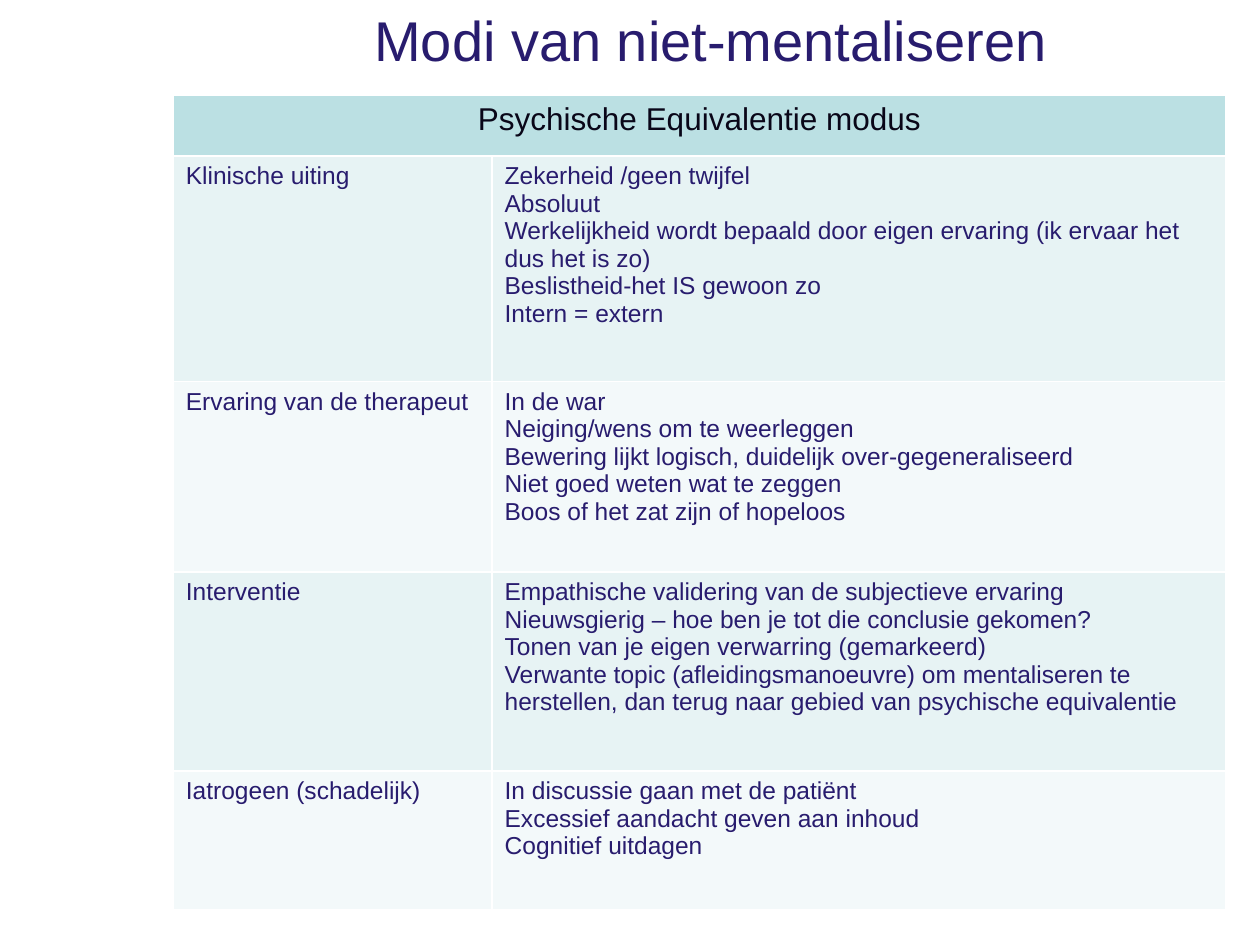
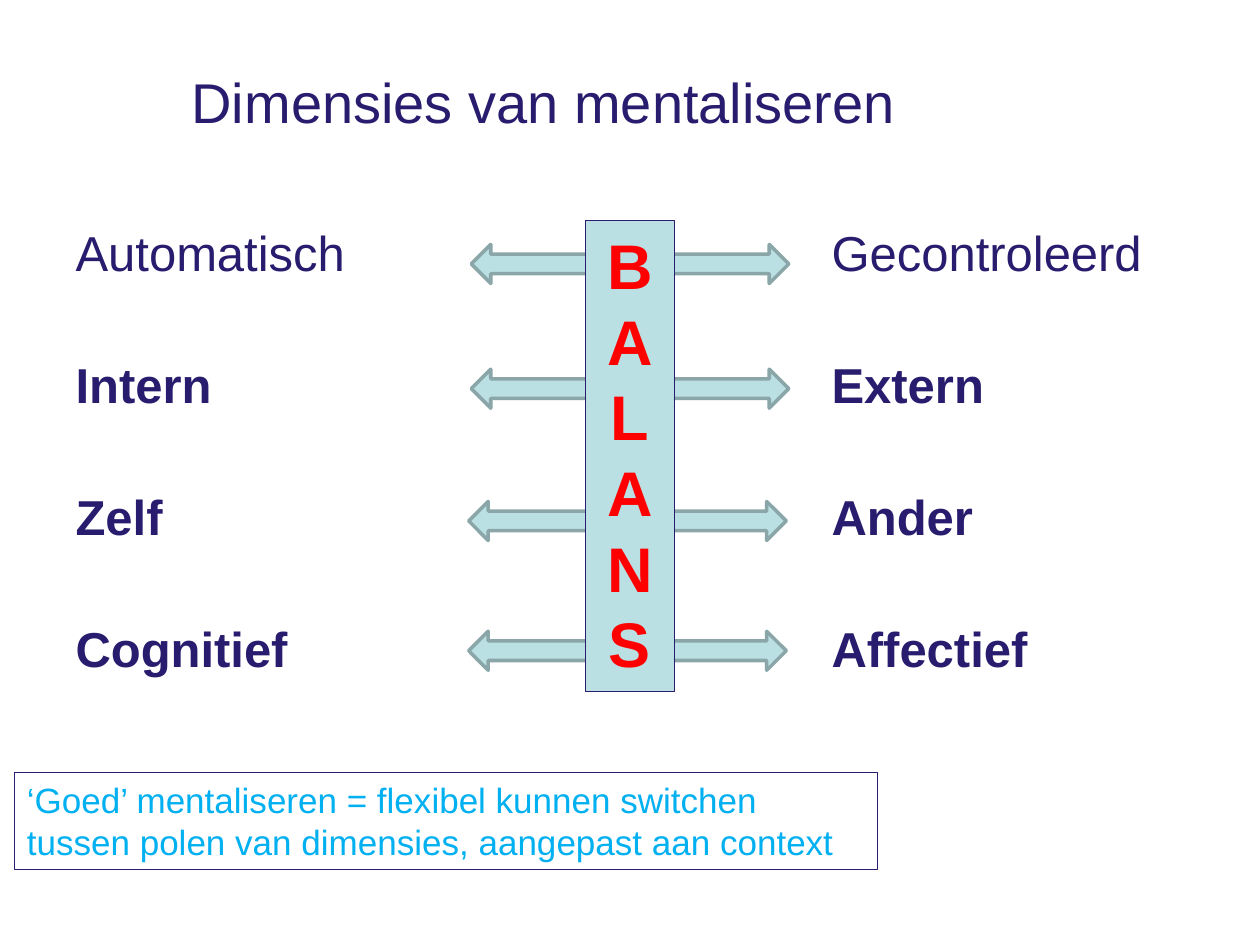
from typing import NamedTuple

from lxml import etree
from pptx import Presentation
from pptx import util as u
from pptx.dml.color import RGBColor
from pptx.enum import shapes, text
from pptx.oxml.ns import qn

# Shared look
FONT = "Arial"
INDIGO, TEAL, WHITE = "281C6E", "BBE0E3", "FFFFFF"
BANDS = ("E7F3F4", "F3F9FA")
LEFT, CENTER = text.PP_ALIGN.LEFT, text.PP_ALIGN.CENTER

# The slide is a grid of 100 columns by 75 rows of square units
COLUMNS = 100
SLIDE_WIDTH, SLIDE_HEIGHT = u.Inches(10), u.Inches(7.5)
UNIT = SLIDE_WIDTH / COLUMNS


class Area(NamedTuple):
    """Place on the grid, in columns and rows."""
    left: float
    top: float
    width: float
    height: float

    def lengths(self) -> list:
        return [grid(value) for value in self]


class Topic(NamedTuple):
    """One row of the mode table."""
    name: str
    points: list
    height: float


class Pole(NamedTuple):
    """A pair of opposites, with the place of its arrow."""
    left: str
    right: str
    arrow_left: float
    arrow_top: float
    bold: bool = True


TOPICS = [
    Topic("Klinische uiting", [
        "Zekerheid /geen twijfel",
        "Absoluut",
        "Werkelijkheid wordt bepaald door eigen ervaring (ik ervaar het dus het is zo)",
        "Beslistheid-het IS gewoon zo",
        "Intern = extern"], 17.9),
    Topic("Ervaring van de therapeut", [
        "In de war",
        "Neiging/wens om te weerleggen",
        "Bewering lijkt logisch, duidelijk over-gegeneraliseerd",
        "Niet goed weten wat te zeggen",
        "Boos of het zat zijn of hopeloos"], 15.1),
    Topic("Interventie", [
        "Empathische validering van de subjectieve ervaring",
        "Nieuwsgierig – hoe ben je tot die conclusie gekomen?",
        "Tonen van je eigen verwarring (gemarkeerd)",
        "Verwante topic (afleidingsmanoeuvre) om mentaliseren te herstellen, "
        "dan terug naar gebied van psychische equivalentie"], 15.8),
    Topic("Iatrogeen (schadelijk)", [
        "In discussie gaan met de patiënt",
        "Excessief aandacht geven aan inhoud",
        "Cognitief uitdagen"], 11),
]

POLES = [
    Pole("Automatisch", "Gecontroleerd", 37.4, 19.4, bold=False),
    Pole("Intern", "Extern", 37.4, 29.3),
    Pole("Zelf", "Ander", 37.2, 39.8),
    Pole("Cognitief", "Affectief", 37.2, 50.1),
]


def grid(units: float) -> int:
    return u.Emu(round(units * UNIT))


def color(value: str) -> RGBColor:
    return RGBColor.from_string(value)


def write(frame, lines, size: float, ink: str = INDIGO, bold: bool = False,
          align=LEFT) -> None:
    """Fill a text frame with one paragraph for each line."""
    for index, line in enumerate(lines):
        paragraph = frame.add_paragraph() if index else frame.paragraphs[0]
        paragraph.alignment = align
        run = paragraph.add_run()
        run.text = line
        run.font.name = FONT
        run.font.size = u.Pt(size)
        run.font.bold = bold
        run.font.color.rgb = color(ink)


def add_titled_slide(presentation, title: str, area: Area):
    slide = presentation.slides.add_slide(presentation.slide_layouts[5])
    shape = slide.shapes.title
    shape.left, shape.top, shape.width, shape.height = area.lengths()
    frame = shape.text_frame
    frame.auto_size = text.MSO_AUTO_SIZE.NONE
    frame.vertical_anchor = text.MSO_ANCHOR.BOTTOM
    write(frame, [title], 32)
    return slide


def style_cell(cell, fill: str | None = None) -> None:
    """Give a cell thin white borders and its fill."""
    properties = cell._tc.get_or_add_tcPr()
    for side in "LRTB":
        line = etree.SubElement(properties, qn(f"a:ln{side}"), w=str(u.Pt(1)))
        solid = etree.SubElement(line, qn("a:solidFill"))
        etree.SubElement(solid, qn("a:srgbClr"), val=WHITE)
    if fill:
        cell.fill.solid()
        cell.fill.fore_color.rgb = color(fill)
    else:
        cell.fill.background()


def add_grid_table(slide, area: Area, widths: list, heights: list, fills: list):
    table = slide.shapes.add_table(len(heights), len(widths), *area.lengths()).table
    table.first_row = table.horz_banding = False
    for column, width in zip(table.columns, widths):
        column.width = grid(width)
    for row, height, fill in zip(table.rows, heights, fills):
        row.height = grid(height)
        for cell in row.cells:
            style_cell(cell, fill)
    return table


def add_block(slide, kind, area: Area, fill: str | None = None,
              line: str = INDIGO, line_width: float = 0.75):
    shape = slide.shapes.add_shape(kind, *area.lengths())
    shape.shadow.inherit = False
    if fill:
        shape.fill.solid()
        shape.fill.fore_color.rgb = color(fill)
    else:
        shape.fill.background()
    shape.line.color.rgb = color(line)
    shape.line.width = u.Pt(line_width)
    shape.text_frame.word_wrap = True
    shape.text_frame.vertical_anchor = text.MSO_ANCHOR.TOP
    return shape


def build_modes(presentation) -> None:
    slide = add_titled_slide(presentation, "Modi van niet-mentaliseren",
                             Area(28.7, 2, 68.5, 4.3))
    heights = [4.8] + [topic.height for topic in TOPICS]
    fills = [TEAL] + [BANDS[index % 2] for index in range(len(TOPICS))]
    table = add_grid_table(slide, Area(13.75, 7.6, 83.5, sum(heights)),
                           [25.3, 58.2], heights, fills)
    # Heading across both columns
    heading = table.cell(0, 0)
    heading.merge(table.cell(0, 1))
    write(heading.text_frame, ["Psychische Equivalentie modus"], 18,
          ink="090618", align=CENTER)
    for row, topic in enumerate(TOPICS, start=1):
        write(table.cell(row, 0).text_frame, [topic.name], 14)
        write(table.cell(row, 1).text_frame, topic.points, 14)


def build_dimensions(presentation) -> None:
    slide = add_titled_slide(presentation, "Dimensies van mentaliseren",
                             Area(14.2, -0.8, 85.8, 12))
    # Opposites in the outer columns
    count = len(POLES)
    table = add_grid_table(slide, Area(5, 17.5, 90, 42), [30] * 3,
                           [42 / count] * count, [None] * count)
    for row, pole in enumerate(POLES):
        write(table.cell(row, 0).text_frame, [pole.left], 28, bold=pole.bold)
        write(table.cell(row, 2).text_frame, [pole.right], 28, bold=pole.bold)
    # Arrows behind the balance bar
    for pole in POLES:
        add_block(slide, shapes.MSO_SHAPE.LEFT_RIGHT_ARROW,
                  Area(pole.arrow_left, pole.arrow_top, 25.2, 3.1),
                  fill=TEAL, line="8AA6A8", line_width=2)
    rectangle = shapes.MSO_SHAPE.RECTANGLE
    bar = add_block(slide, rectangle, Area(46.45, 17.5, 7.1, 37.4), fill=TEAL)
    write(bar.text_frame, "BALANS", 36, ink="FF0000", bold=True, align=CENTER)
    # Conclusion
    conclusion = add_block(slide, rectangle, Area(1.15, 61.3, 68.5, 7.7))
    write(conclusion.text_frame,
          ["‘Goed’ mentaliseren = flexibel kunnen switchen tussen polen "
           "van dimensies, aangepast aan context"],
          20, ink="00B0F0")


def main() -> None:
    presentation = Presentation()
    presentation.slide_width, presentation.slide_height = SLIDE_WIDTH, SLIDE_HEIGHT
    build_modes(presentation)
    build_dimensions(presentation)
    presentation.save("out.pptx")


if __name__ == "__main__":
    main()
